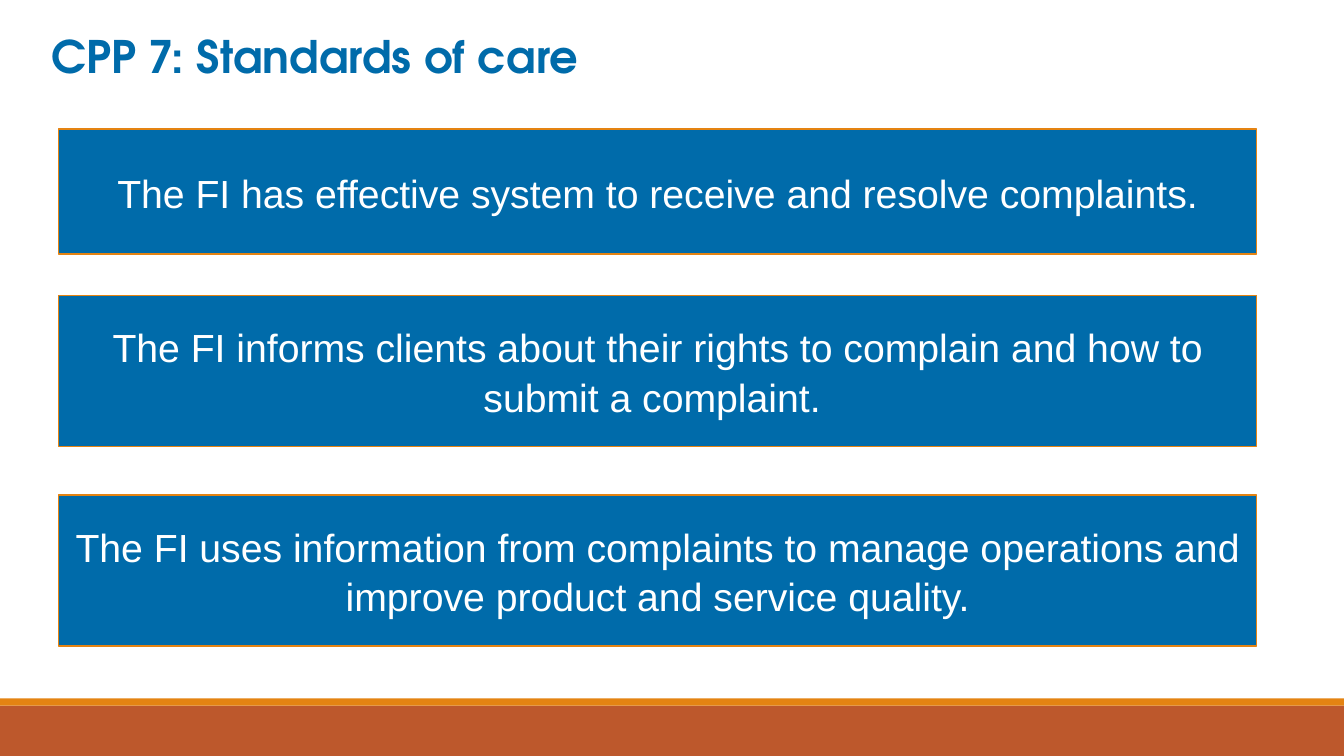
import pptx
import pptx.dml.color
import pptx.enum.shapes
import pptx.enum.text
import pptx.util
from pptx.util import Cm

BLUE = pptx.dml.color.RGBColor(0x00, 0x6B, 0xAA)
ORANGE = pptx.dml.color.RGBColor(0xE4, 0x83, 0x12)
RUST = pptx.dml.color.RGBColor(0xBD, 0x58, 0x2C)
WHITE = pptx.dml.color.RGBColor(0xFF, 0xFF, 0xFF)

SLIDE_WIDTH = Cm(33.87)
SLIDE_HEIGHT = Cm(19.05)

# Top, height and wording of each standard
STANDARDS = [
    (Cm(3.25), Cm(3.15),
     "The FI has effective system to receive and resolve complaints."),
    (Cm(7.44), Cm(3.81),
     "The FI informs clients about their rights to complain and how to submit a complaint. "),
    (Cm(12.47), Cm(3.81),
     "The FI uses information from complaints to manage operations and "
     "improve product and service quality."),
]


def add_rectangle(slide, left, top, width, height, fill):
    rectangle = slide.shapes.add_shape(
        pptx.enum.shapes.MSO_SHAPE.RECTANGLE, left, top, width, height)
    rectangle.shadow.inherit = False
    rectangle.fill.solid()
    rectangle.fill.fore_color.rgb = fill
    rectangle.line.fill.background()
    return rectangle


def add_run(paragraph, text, font_name, size, color, bold=False):
    run = paragraph.add_run()
    run.text = text
    run.font.name = font_name
    run.font.size = pptx.util.Pt(size)
    run.font.color.rgb = color
    run.font.bold = bold


def add_title(slide, text):
    title = slide.shapes.add_textbox(Cm(1.04), Cm(0.61), Cm(25.3), Cm(1.57))
    title.text_frame.word_wrap = True
    add_run(title.text_frame.paragraphs[0], text, "TeX Gyre Adventor", 32, BLUE, bold=True)


def add_standard(slide, top, height, text):
    standard = add_rectangle(slide, Cm(1.47), top, Cm(30.2), height, BLUE)
    standard.line.color.rgb = ORANGE
    standard.line.width = pptx.util.Pt(1)
    frame = standard.text_frame
    frame.word_wrap = True
    frame.vertical_anchor = pptx.enum.text.MSO_ANCHOR.MIDDLE
    paragraph = frame.paragraphs[0]
    paragraph.alignment = pptx.enum.text.PP_ALIGN.CENTER
    paragraph.line_spacing = 1.05
    add_run(paragraph, text, "Arial", 28, WHITE)


def main():
    presentation = pptx.Presentation()
    presentation.slide_width = SLIDE_WIDTH
    presentation.slide_height = SLIDE_HEIGHT
    slide = presentation.slides.add_slide(presentation.slide_layouts[6])

    add_rectangle(slide, 0, Cm(17.78), SLIDE_WIDTH, Cm(1.27), RUST)
    add_rectangle(slide, 0, Cm(17.6), SLIDE_WIDTH, Cm(0.18), ORANGE)
    add_title(slide, "CPP 7: Standards of care")
    for top, height, text in STANDARDS:
        add_standard(slide, top, height, text)

    presentation.save("out.pptx")


if __name__ == "__main__":
    main()
